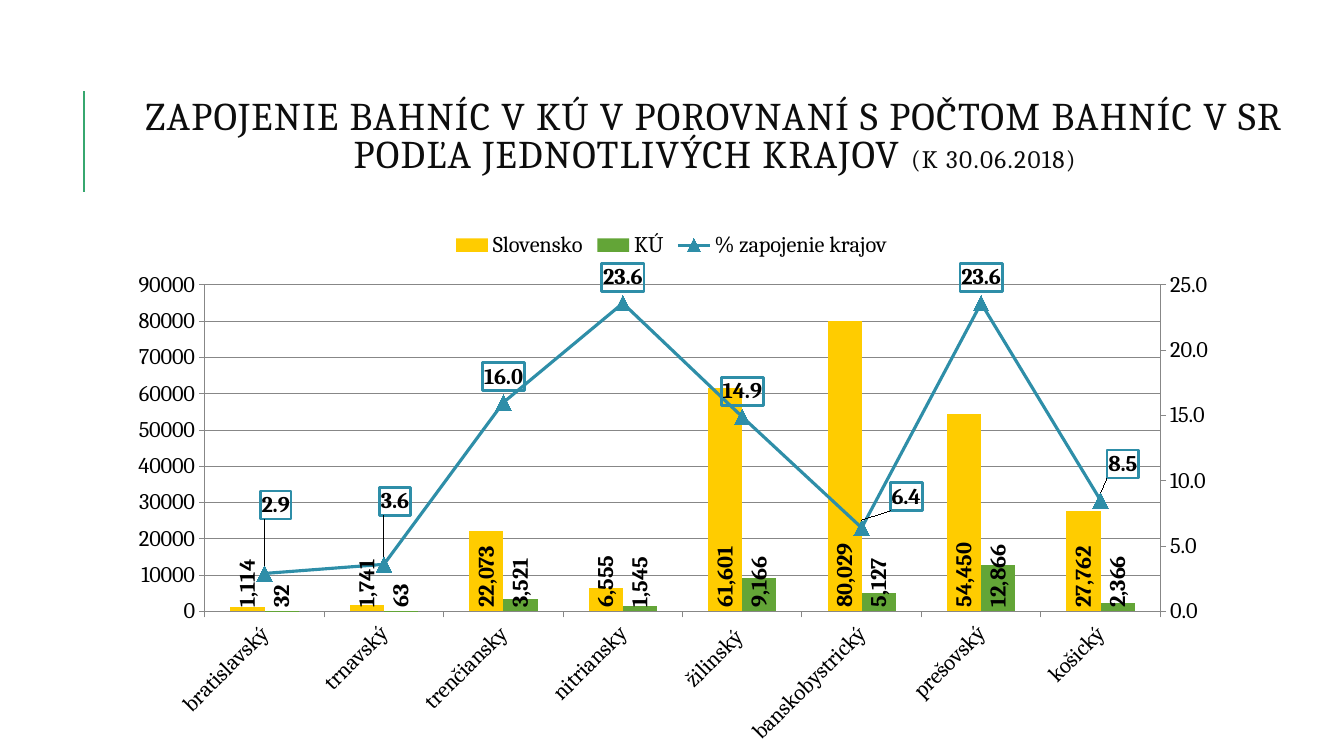
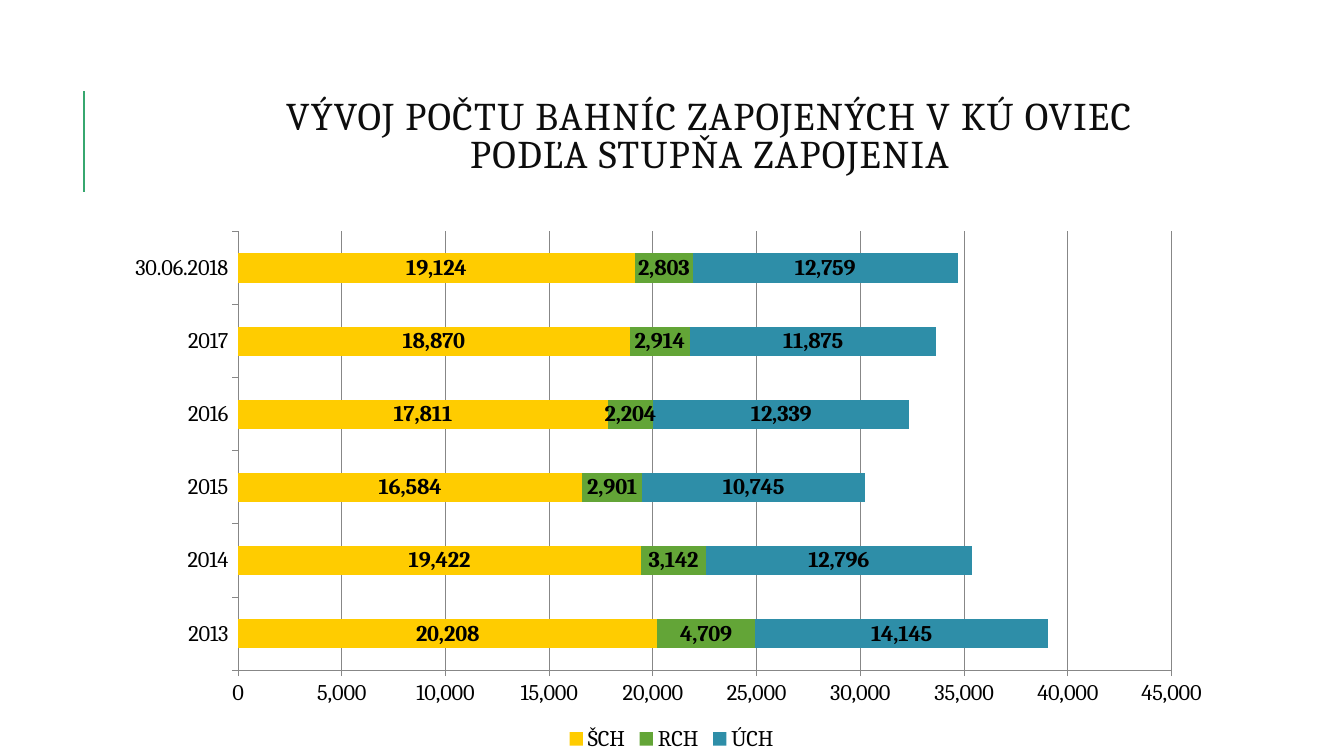
from copy import deepcopy
from dataclasses import dataclass

from pptx import Presentation
from pptx.chart.chart import Chart
from pptx.chart.data import CategoryChartData as Data
from pptx.dml.color import RGBColor as Rgb
from pptx.enum.chart import XL_CHART_TYPE as Kind
from pptx.enum.chart import XL_LABEL_POSITION as Spot
from pptx.enum.chart import XL_LEGEND_POSITION as Side
from pptx.enum.chart import XL_MARKER_STYLE as Mark
from pptx.enum.chart import XL_TICK_MARK as Tick
from pptx.enum.shapes import MSO_CONNECTOR as Link
from pptx.enum.text import MSO_ANCHOR as Anchor
from pptx.enum.text import PP_ALIGN as Align
from pptx.oxml import parse_xml
from pptx.oxml.ns import nsdecls, qn
from pptx.oxml.xmlchemy import OxmlElement as Node
from pptx.slide import Slide
from pptx.util import Inches, Pt

FONT = "Cambria"
HUES = {
    "rule": "37A76F", "title": "0D0D0D", "text": "000000", "grid": "878787",
    "gold": "FFCC00", "green": "63A537", "blue": "2E8EA8",
}
FILLS = ("gold", "green", "blue")


@dataclass
class Graph:
    kind: Kind
    cats: tuple[str, ...]
    rows: dict[str, tuple[float, ...]]
    legend: Side
    spot: Spot
    frame: tuple[float, float, float, float]
    axis: str


@dataclass
class Page:
    lines: tuple[str, ...]
    note: str
    graph: Graph


HERDS = Graph(
    Kind.COLUMN_CLUSTERED,
    ("bratislavský", "trnavský", "trenčiansky", "nitriansky", "žilinský ",
     "banskobystrický", "prešovský", "košický"),
    {
        "Slovensko": (1114, 1741, 22073, 6555, 61601, 80029, 54450, 27762),
        "KÚ": (32, 63, 3521, 1545, 9166, 5127, 12866, 2366),
        "% zapojenie krajov": (2.9, 3.6, 16, 23.6, 14.9, 6.4, 23.6, 8.5),
    },
    Side.TOP, Spot.INSIDE_BASE, (0.08, 0.12, 0.86, 0.61), "General",
)
LEVELS = Graph(
    Kind.BAR_STACKED,
    ("2013", "2014", "2015", "2016", "2017", "30.06.2018"),
    {
        "ŠCH": (20208, 19422, 16584, 17811, 18870, 19124),
        "RCH": (4709, 3142, 2901, 2204, 2914, 2803),
        "ÚCH": (14145, 12796, 10745, 12339, 11875, 12759),
    },
    Side.BOTTOM, Spot.CENTER, (0.11, 0.02, 0.84, 0.82), "#,##0",
)
PAGES = (
    Page(("ZAPOJENIE BAHNÍC V KÚ V POROVNANÍ S POČTOM BAHNÍC V SR "
          "PODĽA JEDNOTLIVÝCH KRAJOV ",), "(K 30.06.2018)", HERDS),
    Page(("VÝVOJ POČTU BAHNÍC ZAPOJENÝCH V KÚ OVIEC ",
          "PODĽA STUPŇA ZAPOJENIA "), "", LEVELS),
)
SHIFTS = {0: (0.01, -0.08), 1: (0.01, -0.07), 5: (0.04, -0.01), 7: (0.02, -0.02)}


def hue(name: str) -> Rgb:
    return Rgb.from_string(HUES[name])


def add_rule(slide: Slide) -> None:
    x = Inches(0.83)
    rule = slide.shapes.add_connector(Link.STRAIGHT, x, Inches(1.9), x, Inches(0.9))
    rule.line.color.rgb = hue("rule")
    rule.line.width = Pt(1.5)
    rule._element.spPr.append(Node("a:effectLst"))


def add_title(slide: Slide, page: Page) -> None:
    box = slide.shapes.add_textbox(Inches(1.12), Inches(0.87), Inches(11.94), Inches(1))
    frame = box.text_frame
    frame.word_wrap = True
    frame.vertical_anchor = Anchor.MIDDLE
    para = frame.paragraphs[0]
    para.alignment = Align.CENTER
    para.line_spacing = 0.8
    para.font.name = FONT
    para.font.size = Pt(28)
    para.font.color.rgb = hue("title")
    for i, line in enumerate(page.lines):
        if i:
            para.add_line_break()
        para.add_run().text = line
    if page.note:
        note = para.add_run()
        note.text = page.note
        note.font.size = Pt(18)
    for run in para.runs:
        run.font._element.set("spc", "100")


def turn(part, angle: int) -> None:
    body = part._element.find(qn("c:txPr")).find(qn("a:bodyPr"))
    body.set("rot", str(angle * 60000))
    body.set("vert", "horz")


def add_labels(series, spot: Spot, form: str):
    labels = series.data_labels
    labels.show_value = True
    labels.position = spot
    labels.number_format = form
    labels.number_format_is_linked = False
    labels.font.bold = True
    return labels


def place(shape: str, box: tuple[float, ...]):
    tags = zip(("x", "y", "w", "h"), box)
    parts = "".join(f'<c:{tag} val="{val}"/>' for tag, val in tags)
    return parse_xml(
        f'<c:layout {nsdecls("c")}><c:manualLayout>{shape}{parts}'
        '</c:manualLayout></c:layout>')


def set_frame(chart: Chart, box: tuple[float, ...]) -> None:
    area = chart._chartSpace.chart.plotArea
    old = area.find(qn("c:layout"))
    if old is not None:
        area.remove(old)
    area.insert(0, place(
        '<c:layoutTarget val="inner"/><c:xMode val="edge"/><c:yMode val="edge"/>', box))


def add_graph(slide: Slide, graph: Graph) -> Chart:
    data = Data()
    data.categories = graph.cats
    for name, vals in graph.rows.items():
        data.add_series(name, vals)
    chart = slide.shapes.add_chart(
        graph.kind, Inches(1.15), Inches(2.19), Inches(11.02), Inches(5.31), data).chart
    chart.font.name = FONT
    chart.font.size = Pt(16)
    chart.font.color.rgb = hue("text")
    chart.has_title = False
    chart.has_legend = True
    chart.legend.position = graph.legend
    chart.legend.include_in_layout = False
    set_frame(chart, graph.frame)
    plot = chart.plots[0]
    plot.gap_width = 150
    plot.vary_by_categories = False
    for axis in (chart.category_axis, chart.value_axis):
        axis.major_tick_mark = Tick.OUTSIDE
        axis.minor_tick_mark = Tick.NONE
        axis.format.line.color.rgb = hue("grid")
    axis = chart.value_axis
    axis.has_major_gridlines = True
    axis.major_gridlines.format.line.color.rgb = hue("grid")
    axis.tick_labels.number_format = graph.axis
    axis.tick_labels.number_format_is_linked = False
    for series, fill in zip(plot.series, FILLS):
        series.format.fill.solid()
        series.format.fill.fore_color.rgb = hue(fill)
        add_labels(series, graph.spot, "#,##0")
    return chart


def split_line(chart: Chart):
    area = chart._chartSpace.chart.plotArea
    ser = chart.plots[0].series[2]._element
    for tag in ("c:invertIfNegative", "c:dLbls", "c:spPr"):
        for old in ser.findall(qn(tag)):
            ser.remove(old)
    line = parse_xml(
        f'<c:lineChart {nsdecls("c")}><c:grouping val="standard"/>'
        '<c:varyColors val="0"/><c:marker val="1"/>'
        '<c:axId val="5001"/><c:axId val="5002"/></c:lineChart>')
    line.insert(2, ser)
    area.find(qn("c:barChart")).addnext(line)
    spot = area.findall(qn("c:valAx"))[-1]
    sides = (("valAx", 5002, 5001, 0, "r", "max"), ("catAx", 5001, 5002, 1, "b", "autoZero"))
    for tag, own, other, hide, side, cross in sides:
        spot.addnext(parse_xml(
            f'<c:{tag} {nsdecls("c", "a")}><c:axId val="{own}"/>'
            '<c:scaling><c:orientation val="minMax"/></c:scaling>'
            f'<c:delete val="{hide}"/><c:axPos val="{side}"/>'
            '<c:numFmt formatCode="0.0" sourceLinked="0"/>'
            '<c:majorTickMark val="out"/><c:minorTickMark val="none"/>'
            '<c:tickLblPos val="nextTo"/><c:spPr><a:ln><a:solidFill>'
            f'<a:srgbClr val="{HUES["grid"]}"/></a:solidFill></a:ln></c:spPr>'
            f'<c:crossAx val="{other}"/><c:crosses val="{cross}"/></c:{tag}>'))
    return chart.plots[1].series[0]


def frame_labels(labels) -> None:
    root = labels._element
    root.find(qn("c:numFmt")).addnext(parse_xml(
        f'<c:spPr {nsdecls("c", "a")}><a:ln w="25400"><a:solidFill>'
        f'<a:srgbClr val="{HUES["blue"]}"/></a:solidFill></a:ln></c:spPr>'))
    style = [kid for kid in root if kid.tag != qn("c:showLeaderLines")]
    for spot, (i, shift) in enumerate(SHIFTS.items()):
        label = Node("c:dLbl")
        mark = Node("c:idx")
        mark.set("val", str(i))
        label.append(mark)
        label.append(place("", shift))
        for kid in style:
            label.append(deepcopy(kid))
        root.insert(spot, label)


def style_herds(chart: Chart) -> None:
    chart.category_axis.tick_labels.font.size = Pt(16)
    turn(chart.category_axis, -45)
    line = split_line(chart)
    for series in chart.plots[0].series:
        turn(series.data_labels, -90)
    line.smooth = False
    line.format.line.color.rgb = hue("blue")
    line.format.line.width = Pt(2.25)
    mark = line.marker
    mark.style = Mark.TRIANGLE
    mark.size = 11
    mark.format.fill.solid()
    mark.format.fill.fore_color.rgb = hue("blue")
    mark.format.line.color.rgb = hue("blue")
    frame_labels(add_labels(line, Spot.ABOVE, "0.0"))


def main() -> None:
    deck = Presentation()
    deck.slide_width = Inches(13.33)
    deck.slide_height = Inches(7.5)
    for page in PAGES:
        slide = deck.slides.add_slide(deck.slide_layouts[6])
        add_rule(slide)
        add_title(slide, page)
        chart = add_graph(slide, page.graph)
        if page.graph is HERDS:
            style_herds(chart)
    deck.save("out.pptx")


if __name__ == "__main__":
    main()
